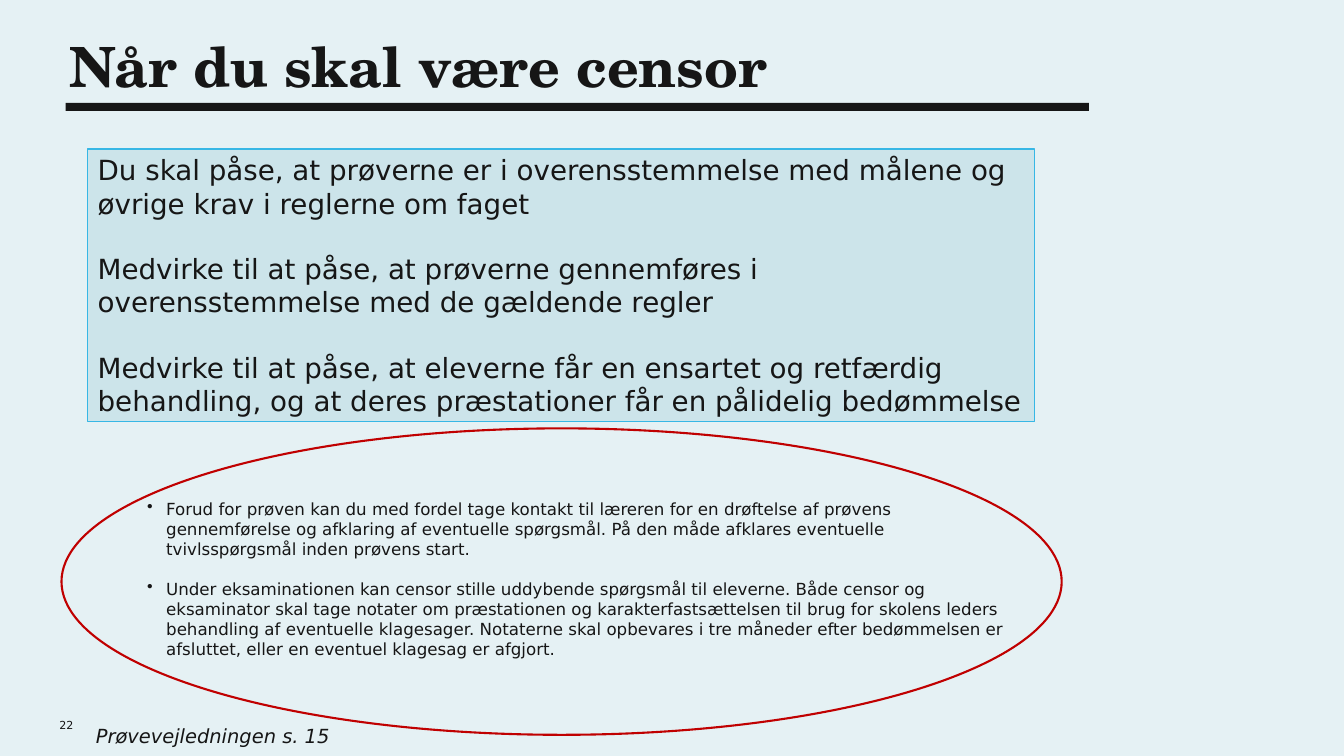
import pptx
import pptx.util
import pptx.dml.color
import pptx.enum.shapes
import pptx.enum.text
import lxml.etree

Pt = pptx.util.Pt
Kind = pptx.enum.shapes.MSO_SHAPE
Anchor = pptx.enum.text.MSO_ANCHOR

# Slide grid: 133.3 columns by 75 rows
COLS, ROWS = 133.3, 75
WIDE, HIGH = pptx.util.Inches(13.33), pptx.util.Inches(7.5)
COL, ROW = WIDE / COLS, HIGH / ROWS

HUES = {"back": "E5F1F4", "panel": "CCE4EA", "edge": "37B7E5",
        "ink": "161616", "ring": "C00000"}
SANS, SERIF = "DejaVu Sans", "TeX Gyre Schola"

DUTIES = [
    "Du skal påse, at prøverne er i overensstemmelse med målene og øvrige krav i reglerne om faget",
    "Medvirke til at påse, at prøverne gennemføres i overensstemmelse med de gældende regler",
    "Medvirke til at påse, at eleverne får en ensartet og retfærdig behandling, "
    "og at deres præstationer får en pålidelig bedømmelse",
]
NOTES = [
    "Forud for prøven kan du med fordel tage kontakt til læreren for en drøftelse af prøvens "
    "gennemførelse og afklaring af eventuelle spørgsmål. På den måde afklares eventuelle "
    "tvivlsspørgsmål inden prøvens start.",
    "Under eksaminationen kan censor stille uddybende spørgsmål til eleverne. Både censor og "
    "eksaminator skal tage notater om præstationen og karakterfastsættelsen til brug for skolens "
    "leders behandling af eventuelle klagesager. Notaterne skal opbevares i tre måneder efter "
    "bedømmelsen er afsluttet, eller en eventuel klagesag er afgjort.",
]


def tint(name):
    return pptx.dml.color.RGBColor.from_string(HUES[name])


def place(box):
    """Turn left, top, width, height in grid units into slide lengths."""
    x, y, w, h = box
    return round(x * COL), round(y * ROW), round(w * COL), round(h * ROW)


def form(slide, kind, box, fill=None, line=None, thick=1):
    shape = slide.shapes.add_shape(kind, *place(box))
    shape.shadow.inherit = False
    if fill:
        shape.fill.solid()
        shape.fill.fore_color.rgb = tint(fill)
    else:
        shape.fill.background()
    if line:
        shape.line.color.rgb = tint(line)
        shape.line.width = Pt(thick)
    else:
        shape.line.fill.background()
    return shape


def dot(para):
    """Give a paragraph a hanging bullet."""
    props = para._p.get_or_add_pPr()
    props.set("marL", str(round(6.8 * COL)))
    props.set("indent", str(round(-1.9 * COL)))
    mark = lxml.etree.SubElement(props, pptx.oxml.ns.qn("a:buChar"))
    mark.set("char", "•")


def write(shape, lines, size, face=SANS, gap=0, bullet=False, flush=False,
          anchor=Anchor.TOP, bold=False, slant=False, lead=None):
    frame = shape.text_frame
    frame.word_wrap = True
    frame.vertical_anchor = anchor
    if flush:
        frame.margin_left = frame.margin_right = 0
        frame.margin_top = frame.margin_bottom = 0
    for i, line in enumerate(lines):
        para = frame.add_paragraph() if i else frame.paragraphs[0]
        if bullet:
            dot(para)
        para.alignment = pptx.enum.text.PP_ALIGN.LEFT
        if i:
            para.space_before = Pt(gap)
        if lead:
            para.line_spacing = lead
        run = para.add_run()
        run.text = line
        font = run.font
        font.name, font.size = face, Pt(size)
        font.bold, font.italic = bold, slant
        font.color.rgb = tint("ink")


def label(slide, box, lines, size, **style):
    write(slide.shapes.add_textbox(*place(box)), lines, size, **style)


def head(slide, box):
    """Title with a heavy rule along the foot of the box."""
    x, y, w, h = box
    label(slide, (x + 0.4, y, w - 12.3, h - 0.7), ["Når du skal være censor"], 39.6,
          face=SERIF, flush=True, bold=True, lead=0.83)
    form(slide, Kind.RECTANGLE, (x, y + h - 0.8, w, 0.8), fill="ink")


def panel(slide, box):
    """Framed list of duties."""
    shape = form(slide, Kind.RECTANGLE, box, fill="panel", line="edge")
    write(shape, DUTIES, 19.8, gap=23, anchor=Anchor.MIDDLE)


def advice(slide, box):
    """Bulleted advice inside a ring."""
    x, y, w, h = box
    label(slide, (x + 2.6, y + 6.5, w - 7.3, 19), NOTES, 11.9, gap=14, bullet=True)
    form(slide, Kind.OVAL, box, line="ring", thick=1.5)


def foot(slide, box):
    """Page number and source."""
    x, y, w, h = box
    label(slide, (x, y, 3, 2), ["22"], 7.9, flush=True, anchor=Anchor.BOTTOM)
    label(slide, (x + 3.6, y + h - 2.3, w - 3.6, 2.3), ["Prøvevejledningen s. 15"], 13.9,
          flush=True, slant=True)


def main():
    deck = pptx.Presentation()
    deck.slide_width, deck.slide_height = WIDE, HIGH
    slide = deck.slides.add_slide(deck.slide_layouts[6])
    slide.background.fill.solid()
    slide.background.fill.fore_color.rgb = tint("back")
    panel(slide, (8.7, 14.8, 93.9, 27))
    head(slide, (6.5, 4.3, 101.5, 6.7))
    advice(slide, (6.1, 42.5, 99.2, 30.4))
    foot(slide, (5.9, 70.6, 29.8, 3.5))
    deck.save("out.pptx")


if __name__ == "__main__":
    main()
